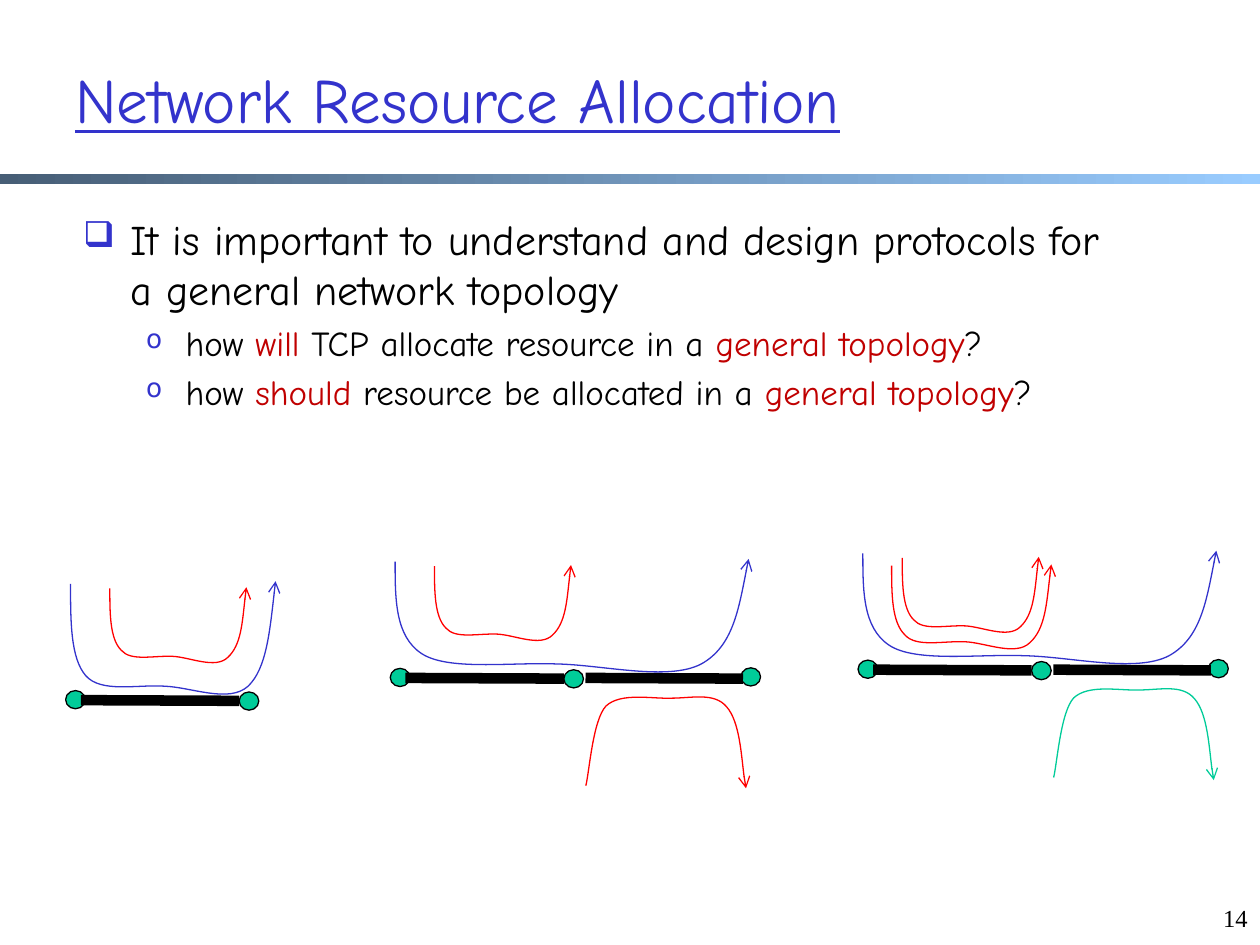
from lxml import etree
from pptx import Presentation
from pptx import util as u
from pptx.dml.color import RGBColor
from pptx.enum import shapes, text
from pptx.oxml import ns

Pt = u.Pt
BLUE = RGBColor(0x33, 0x33, 0xCC)
RED = RGBColor(0xFF, 0x00, 0x00)
GREEN = RGBColor(0x00, 0xCC, 0x99)
BLACK = RGBColor(0x00, 0x00, 0x00)
CRIMSON = RGBColor(0xC0, 0x00, 0x00)
SLATE = RGBColor(0x47, 0x5E, 0x76)
SKY = RGBColor(0x99, 0xCC, 0xFF)

deck = Presentation()
deck.slide_width, deck.slide_height = Pt(720), Pt(540)
slide = deck.slides.add_slide(deck.slide_layouts[6])


def write(paragraph, words, size=20, color=BLACK, font="Comic Neue", underline=None):
    run = paragraph.add_run()
    run.text = words
    run.font.size = Pt(size)
    run.font.name = font
    run.font.color.rgb = color
    run.font.underline = underline


def flow(points, left, top, color, stretch=(1, 1)):
    spots = [(Pt(left + x * stretch[0]), Pt(top + y * stretch[1])) for x, y in points]
    builder = slide.shapes.build_freeform(*spots[0])
    builder.add_line_segments(spots[1:], close=False)
    curve = builder.convert_to_shape()
    curve.shadow.inherit = False
    curve.fill.background()
    curve.line.color.rgb = color
    curve.line.width = Pt(0.75)
    segments = curve._element.xpath(".//a:lnTo")
    track = segments[0].getparent()
    for i in range(0, len(segments), 3):
        bezier = etree.SubElement(track, ns.qn("a:cubicBezTo"))
        for segment in segments[i:i + 3]:
            bezier.append(segment[0])
            track.remove(segment)
    etree.SubElement(curve.line._get_or_add_ln(), ns.qn("a:tailEnd"), type="arrow")


divider = slide.shapes.add_shape(shapes.MSO_SHAPE.RECTANGLE, 0, Pt(99.5), Pt(720), Pt(5.75))
divider.shadow.inherit = False
divider.line.fill.background()
divider.fill.gradient()
divider.fill.gradient_angle = 0
for stop, color in zip(divider.fill.gradient_stops, (SLATE, SKY)):
    stop.color.rgb = color

page = slide.shapes.add_textbox(Pt(684), Pt(512.75), Pt(36), Pt(36)).text_frame
page.word_wrap = True
page.paragraphs[0].alignment = text.PP_ALIGN.RIGHT
write(page.paragraphs[0], "14", size=14, font="Times New Roman")

title = slide.shapes.add_textbox(Pt(36), Pt(22.5), Pt(612), Pt(67.5)).text_frame
title.word_wrap = True
title.vertical_anchor = text.MSO_ANCHOR.MIDDLE
write(title.paragraphs[0], "Network Resource Allocation", size=36, color=BLUE, underline=True)

body = slide.shapes.add_textbox(Pt(40.5), Pt(118.5), Pt(612), Pt(366)).text_frame
body.word_wrap = True
points = [
    (0, 24, "❑", 85, 27, 27,
     [("It is important to understand and design protocols for a general network topology", BLACK)]),
    (1, 20, "o", 75, 58.5, 22.5,
     [("how ", BLACK), ("will ", CRIMSON), ("TCP allocate resource in a ", BLACK),
      ("general topology", CRIMSON), ("?", BLACK)]),
    (1, 20, "o", 75, 58.5, 22.5,
     [("how ", BLACK), ("should ", CRIMSON), ("resource be allocated in a ", BLACK),
      ("general topology", CRIMSON), ("?", BLACK)]),
]
for i, (level, size, mark, mark_size, margin, hang, pieces) in enumerate(points):
    point = body.add_paragraph() if i else body.paragraphs[0]
    point.level = level
    point.space_before = Pt(size * 0.2)
    props = point._p.get_or_add_pPr()
    props.set("marL", str(Pt(margin)))
    props.set("indent", str(-Pt(hang)))
    tint = etree.SubElement(props, ns.qn("a:buClr"))
    etree.SubElement(tint, ns.qn("a:srgbClr"), val=str(BLUE))
    etree.SubElement(props, ns.qn("a:buSzPct"), val=str(mark_size * 1000))
    etree.SubElement(props, ns.qn("a:buChar"), char=mark)
    for words, color in pieces:
        write(point, words, size=size, color=color)

LONG = [(0, 1.5), (0, 23), (0, 44), (15, 54), (30, 64), (65.5, 59), (92, 60),
        (119, 60.5), (156, 70), (175, 60), (193, 50), (197, 25), (202, 0)]
SHORT = [(0, 0.7), (0, 15), (0, 29.5), (6.5, 36), (12, 42.5), (25, 39), (36, 39.5),
         (46, 40), (60.5, 47), (67.5, 40), (75, 33), (76, 16.5), (78, 0)]
BELOW = [(0, 53.5), (2, 45.5), (4, 16), (11.5, 8), (20, 0), (38, 4), (49, 3.5),
         (60.5, 3.5), (73.5, 0), (80.5, 8.5), (88, 17), (89.5, 45.5), (91.5, 55)]
NODES = [(0, 0), (99.2, 0.8), (200.4, -0.3)]
LINKS = [(8.7, 99.2), (111.6, 201.6)]

networks = [
    (490.3, 377.2, 2, GREEN),
    (37.5, 394.6, 1, None),
    (223, 381.9, 2, RED),
]
for left, top, hops, below_color in networks:
    for x, y in NODES[:hops + 1]:
        node = slide.shapes.add_shape(
            shapes.MSO_SHAPE.OVAL, Pt(left + x), Pt(top + y), Pt(11.2), Pt(10.4))
        node.shadow.inherit = False
        node.fill.solid()
        node.fill.fore_color.rgb = GREEN
        node.line.color.rgb = BLACK
        node.line.width = Pt(0.75)
    for start, end in LINKS[:hops]:
        link = slide.shapes.add_connector(
            shapes.MSO_CONNECTOR.STRAIGHT,
            Pt(left + start), Pt(top + 5.5), Pt(left + end), Pt(top + 5.9))
        link.line.color.rgb = BLACK
        link.line.width = Pt(6)
        etree.SubElement(link._element.spPr, ns.qn("a:effectLst"))
    flow(LONG, left + 2.8, top - 62.5, BLUE, stretch=(1 if hops == 2 else 0.58, 1))
    flow(SHORT, left + 25.3, top - 59, RED)
    if below_color:
        flow(BELOW, left + 111.8, top + 13.6, below_color)

extra_left, extra_top = networks[0][:2]
flow(SHORT, extra_left + 19.2, extra_top - 54.7, RED, stretch=(1.17, 1.12))

deck.save("out.pptx")
